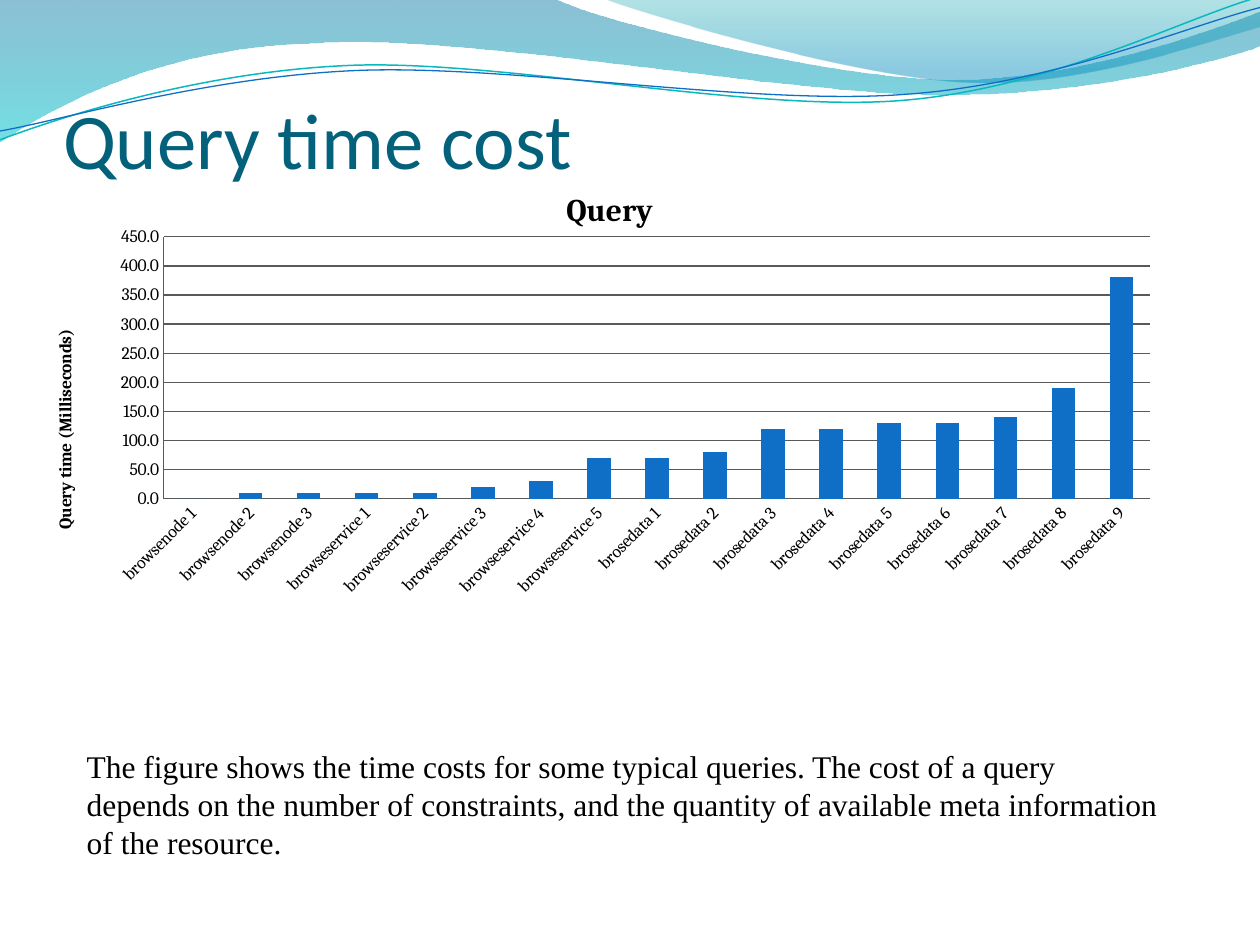
"""Build the query time cost slide with its wave header and column chart."""
from lxml.etree import SubElement
from pptx import Presentation
from pptx.chart.data import CategoryChartData
from pptx.dml.color import RGBColor
from pptx.enum.chart import XL_CHART_TYPE as ChartType, XL_TICK_MARK as TickMark
from pptx.enum.text import MSO_ANCHOR as Anchor, MSO_AUTO_SIZE as AutoSize, PP_ALIGN as Align
from pptx.oxml import parse_xml
from pptx.oxml.ns import nsdecls, qn
from pptx.util import Inches, Pt

BLACK = RGBColor(0x00, 0x00, 0x00)
GREY = RGBColor(0x59, 0x59, 0x59)
BLUE = RGBColor(0x0F, 0x6F, 0xC6)
TEAL = RGBColor(0x0A, 0xB8, 0xBF)
TITLE_COLOR = RGBColor(0x04, 0x61, 0x7B)

TITLE = "Query time cost"
CAPTION = (
    "The figure shows the time costs for some typical queries. The cost of a query "
    "depends on the number of constraints, and the quantity of available meta "
    "information of the resource."
)
QUERY_TIMES = {
    "browsenode": [0, 10, 10],
    "browseservice": [10, 10, 20, 30, 70],
    "brosedata": [70, 80, 120, 120, 130, 130, 140, 190, 380],
}
CHART_WIDTH, CHART_HEIGHT = 9.13, 4.41

# Each segment holds one point for a line or three points for a Bézier curve.
BANDS = [
    (
        [[(0, 0)], [(4.4, -0.01)],
         [(4.76, 0.17), (6.64, 0.63), (7.58, 0.63)],
         [(8.53, 0.63), (9.58, 0.26), (10, 0.09)],
         [(10.01, 0.36)],
         [(9.83, 0.44), (8.7, 0.76), (7.46, 0.75)],
         [(6.22, 0.75), (3.82, 0.28), (2.57, 0.34)],
         [(1.29, 0.36), (0.46, 0.83), (-0.01, 1.13)]],
        [(0, "0074A1", 45), (100, "00C6CF", 55)],
    ),
    (
        [[(4.79, -0.01)],
         [(5.09, 0.11), (6.82, 0.62), (7.69, 0.65)],
         [(8.56, 0.69), (9.61, 0.32), (10, 0.21)],
         [(10, 0)]],
        [(0, "00A1A9", 30), (80, "008BBF", 45)],
    ),
]
WAVES = [
    (
        [[(0, 1.11)],
         [(0.48, 0.93), (1.58, 0.57), (2.77, 0.52)],
         [(3.95, 0.47), (5.93, 0.89), (7.13, 0.8)],
         [(8.33, 0.71), (9.38, 0.15), (9.98, -0.02)]],
        TEAL, 0.85,
    ),
    (
        [[(0, 1.04)],
         [(0.47, 0.96), (1.64, 0.61), (2.83, 0.56)],
         [(4.03, 0.51), (5.97, 0.84), (7.17, 0.75)],
         [(8.36, 0.67), (9.41, 0.21), (10, 0.06)]],
        BLUE, 0.75,
    ),
]


def add_outline(slide, segments, close):
    start, *rest = [(Inches(x), Inches(y)) for segment in segments for x, y in segment]
    builder = slide.shapes.build_freeform(*start)
    builder.add_line_segments(rest, close=close)
    shape = builder.convert_to_shape()
    lines = iter(list(shape.element.iter(qn("a:lnTo"))))
    for segment in segments[1:]:
        first, *others = [next(lines) for _ in segment]
        if others:
            first.tag = qn("a:cubicBezTo")
        for line in others:
            first.append(line[0])
            line.getparent().remove(line)
    shape.shadow.inherit = False
    shape.fill.background()
    return shape


def add_band(slide, segments, stops):
    shape = add_outline(slide, segments, True)
    shape.line.fill.background()
    stop_xml = "".join(
        f'<a:gs pos="{position * 1000}"><a:srgbClr val="{color}">'
        f'<a:alpha val="{alpha * 1000}"/></a:srgbClr></a:gs>'
        for position, color, alpha in stops
    )
    gradient = parse_xml(
        f'<a:gradFill {nsdecls("a")}><a:gsLst>{stop_xml}</a:gsLst>'
        '<a:lin ang="5400000" scaled="0"/></a:gradFill>'
    )
    properties = shape.element.spPr
    properties.replace(properties.find(qn("a:noFill")), gradient)


def add_wave(slide, segments, color, width):
    line = add_outline(slide, segments, False).line
    line.color.rgb = color
    line.width = Pt(width)


def set_layout(parent, index, left, top, size=None):
    for old in parent.findall(qn("c:layout")):
        parent.remove(old)
    layout = parent.makeelement(qn("c:layout"))
    parent.insert(index, layout)
    values = {"layoutTarget": "inner"} if size else {}
    values |= {"xMode": "edge", "yMode": "edge"}
    values |= {"x": left / CHART_WIDTH, "y": top / CHART_HEIGHT}
    if size:
        values |= {"w": size[0] / CHART_WIDTH, "h": size[1] / CHART_HEIGHT}
    manual = SubElement(layout, qn("c:manualLayout"))
    for name, value in values.items():
        SubElement(manual, qn(f"c:{name}")).set("val", str(value))


def set_chart_title(title, text, size, left, top):
    title.text_frame.text = text
    font = title.text_frame.paragraphs[0].font
    font.name, font.size, font.bold = "Cambria", Pt(size), True
    font.color.rgb = BLACK
    set_layout(title._element, 1, left, top)


def add_query_chart(slide):
    data = CategoryChartData(number_format="0.0")
    data.categories = [
        f"{kind} {number}"
        for kind, times in QUERY_TIMES.items()
        for number in range(1, len(times) + 1)
    ]
    data.add_series("Query", [time for times in QUERY_TIMES.values() for time in times])
    chart = slide.shapes.add_chart(
        ChartType.COLUMN_CLUSTERED, Inches(0.28), Inches(1.31),
        Inches(CHART_WIDTH), Inches(CHART_HEIGHT), data,
    ).chart
    chart.font.name, chart.font.size = "Cambria", Pt(10)
    chart.font.color.rgb = BLACK
    chart.has_legend = False
    set_chart_title(chart.chart_title, "Query", 18, 4.17, 0.14)

    plot = chart.plots[0]
    plot.gap_width = 150
    plot.vary_by_categories = False
    fill = plot.series[0].format.fill
    fill.solid()
    fill.fore_color.rgb = BLUE

    values, categories = chart.value_axis, chart.category_axis
    values.minimum_scale, values.maximum_scale, values.major_unit = 0, 450, 50
    values.tick_labels.number_format = "0.0"
    values.tick_labels.number_format_is_linked = False
    set_chart_title(values.axis_title, "Query time (Milliseconds)", 10, 0.12, 1.28)
    for axis in (values, categories):
        axis.major_tick_mark = axis.minor_tick_mark = TickMark.NONE
        axis.tick_labels.font.size = Pt(10)
    for part in (values, categories, values.major_gridlines):
        part.format.line.color.rgb = GREY
        part.format.line.width = Pt(0.75)
    categories._element.find(qn("c:txPr")).find(qn("a:bodyPr")).set("rot", "-2700000")
    set_layout(chart._chartSpace.chart.plotArea, 0, 1.02, 0.57, (7.83, 2.08))


def write_text(shape, text, font_name, size, color):
    frame = shape.text_frame
    frame.word_wrap = True
    frame.text = text
    paragraph = frame.paragraphs[0]
    paragraph.alignment = Align.LEFT
    font = paragraph.font
    font.name, font.size = font_name, Pt(size)
    font.color.rgb = color
    return frame


def main():
    presentation = Presentation()
    presentation.slide_width, presentation.slide_height = Inches(10), Inches(7.5)
    slide = presentation.slides.add_slide(presentation.slide_layouts[5])
    for band in BANDS:
        add_band(slide, *band)
    for wave in WAVES:
        add_wave(slide, *wave)

    title = slide.shapes.title
    slide.shapes._spTree.append(title.element)
    title.left, title.top = Inches(0.5), Inches(0.77)
    title.width, title.height = Inches(9), Inches(0.7)
    frame = write_text(title, TITLE, "Calibri", 45, TITLE_COLOR)
    frame.vertical_anchor = Anchor.BOTTOM
    frame.margin_left = frame.margin_right = frame.margin_bottom = 0

    add_query_chart(slide)
    caption = slide.shapes.add_textbox(
        Inches(0.59), Inches(5.88), Inches(8.74), Inches(1.01)
    )
    frame = write_text(caption, CAPTION, "Times New Roman", 18, BLACK)
    frame.auto_size = AutoSize.SHAPE_TO_FIT_TEXT
    presentation.save("out.pptx")


if __name__ == "__main__":
    main()
